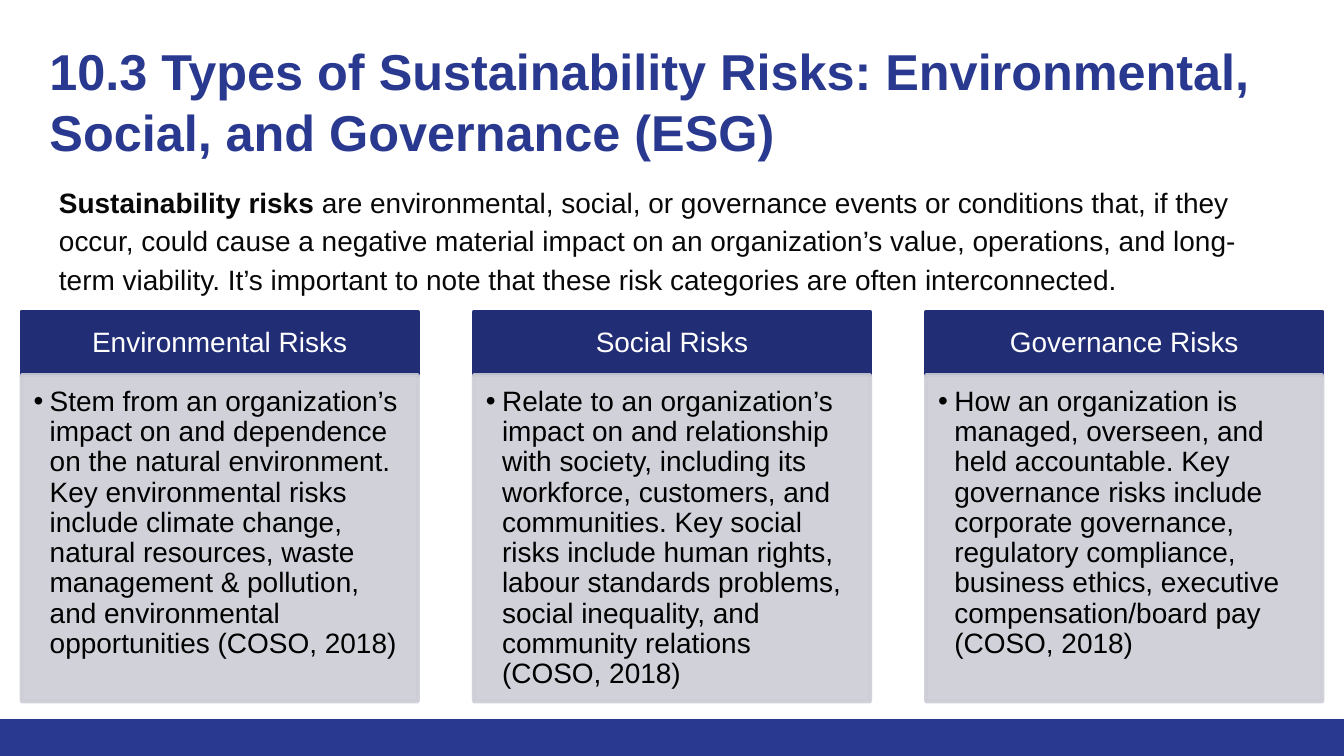
from lxml import etree
from pptx import Presentation
from pptx import util as u
from pptx.dml.color import RGBColor
from pptx.enum import shapes, text
from pptx.oxml.ns import qn

BLUE = RGBColor(0x2A, 0x39, 0x90)
NAVY = RGBColor(0x21, 0x2D, 0x74)
GREY = RGBColor(0xCD, 0xCD, 0xD6)
INK = RGBColor(0x08, 0x08, 0x08)
BLACK = RGBColor(0, 0, 0)
WHITE = RGBColor(255, 255, 255)

TITLE = "10.3 Types of Sustainability Risks: Environmental, Social, and Governance (ESG)"
INTRO = [
    ("Sustainability risks ", True),
    ("are environmental, social, or governance events or conditions that, if they occur, "
     "could cause a negative material impact on an organization’s value, operations, and "
     "long-term viability. It’s important to note that these risk categories are often "
     "interconnected.", False),
]
RISKS = [
    ("Environmental Risks",
     "Stem from an organization’s impact on and dependence on the natural environment. "
     "Key environmental risks include climate change, natural resources, waste management "
     "& pollution, and environmental opportunities (COSO, 2018)"),
    ("Social Risks",
     "Relate to an organization’s impact on and relationship with society, including its "
     "workforce, customers, and communities. Key social risks include human rights, labour "
     "standards problems, social inequality, and community relations (COSO, 2018)"),
    ("Governance Risks",
     "How an organization is managed, overseen, and held accountable. Key governance risks "
     "include corporate governance, regulatory compliance, business ethics, executive "
     "compensation/board pay (COSO, 2018)"),
]

WIDTH = 10
HEIGHT = WIDTH * 9 / 16
MARGIN, COLUMN = 0.16, 2.95
STEP = (WIDTH - 2 * MARGIN - COLUMN) / (len(RISKS) - 1)
HEAD_TOP, HEAD_HEIGHT, BODY_HEIGHT = 2.32, 0.47, 2.43
BAR_TOP = 5.35


def apply(target, values):
    for name, value in values.items():
        setattr(target, name, value)


def add_text(box, runs, size, color, insets, anchor=text.MSO_ANCHOR.TOP, **layout):
    frame = box.text_frame
    sides = ("margin_left", "margin_top", "margin_right", "margin_bottom")
    apply(frame, dict(zip(sides, map(u.Inches, insets))))
    apply(frame, {"word_wrap": True, "vertical_anchor": anchor})
    para = frame.paragraphs[0]
    apply(para, {"alignment": text.PP_ALIGN.LEFT, **layout})
    for words, bold in runs:
        span = para.add_run()
        span.text = words
        apply(span.font, {"name": "Arial", "size": u.Pt(size), "bold": bold})
        span.font.color.rgb = color
    return para


def add_text_box(page, area, *args, **layout):
    box = page.shapes.add_textbox(*map(u.Inches, area))
    add_text(box, *args, **layout)


def add_panel(page, area, color, outline=True):
    panel = page.shapes.add_shape(shapes.MSO_SHAPE.RECTANGLE, *map(u.Inches, area))
    panel.shadow.inherit = False
    panel.fill.solid()
    panel.fill.fore_color.rgb = color
    if outline:
        panel.line.color.rgb = color
        panel.line.width = u.Pt(2)
    else:
        panel.line.fill.background()
    return panel


def set_opacity(panel, percent):
    for color in panel.element.spPr.iter(qn("a:srgbClr")):
        etree.SubElement(color, qn("a:alpha"), val=str(percent * 1000))


def add_bullet(para, indent):
    props = para._p.get_or_add_pPr()
    props.set("marL", str(u.Inches(indent)))
    props.set("indent", str(-u.Inches(indent)))
    color = etree.SubElement(props, qn("a:buClr"))
    etree.SubElement(color, qn("a:srgbClr"), val=str(BLACK))
    etree.SubElement(props, qn("a:buFont"), typeface="Arial")
    etree.SubElement(props, qn("a:buChar"), char="•")


def add_risk(page, left, heading, detail):
    head = add_panel(page, (left, HEAD_TOP, COLUMN, HEAD_HEIGHT), NAVY)
    add_text(head, [(heading, False)], 15, WHITE, (0.12, 0.07, 0.12, 0.07),
             text.MSO_ANCHOR.MIDDLE, alignment=text.PP_ALIGN.CENTER, line_spacing=0.9)
    body = add_panel(page, (left, HEAD_TOP + HEAD_HEIGHT, COLUMN, BODY_HEIGHT), GREY)
    set_opacity(body, 90)
    para = add_text(body, [(detail, False)], 15, BLACK, (0.09, 0.09, 0.12, 0.13),
                    line_spacing=0.9)
    para.level = 1
    add_bullet(para, 0.12)


def main():
    deck = Presentation()
    apply(deck, {"slide_width": u.Inches(WIDTH), "slide_height": u.Inches(HEIGHT)})
    page = deck.slides.add_slide(deck.slide_layouts[6])
    add_panel(page, (0, BAR_TOP, WIDTH, HEIGHT - BAR_TOP), BLUE, outline=False)
    add_text_box(page, (0.27, 0.2, 9.2, 0.89), [(TITLE, True)], 27, BLUE, [0.1] * 4)
    add_text_box(page, (0.34, 1.24, 9.32, 1.07), INTRO, 15, INK, [0.1] * 4,
                 line_spacing=1.15)
    for index, (heading, detail) in enumerate(RISKS):
        add_risk(page, MARGIN + index * STEP, heading, detail)
    deck.save("out.pptx")


if __name__ == "__main__":
    main()
